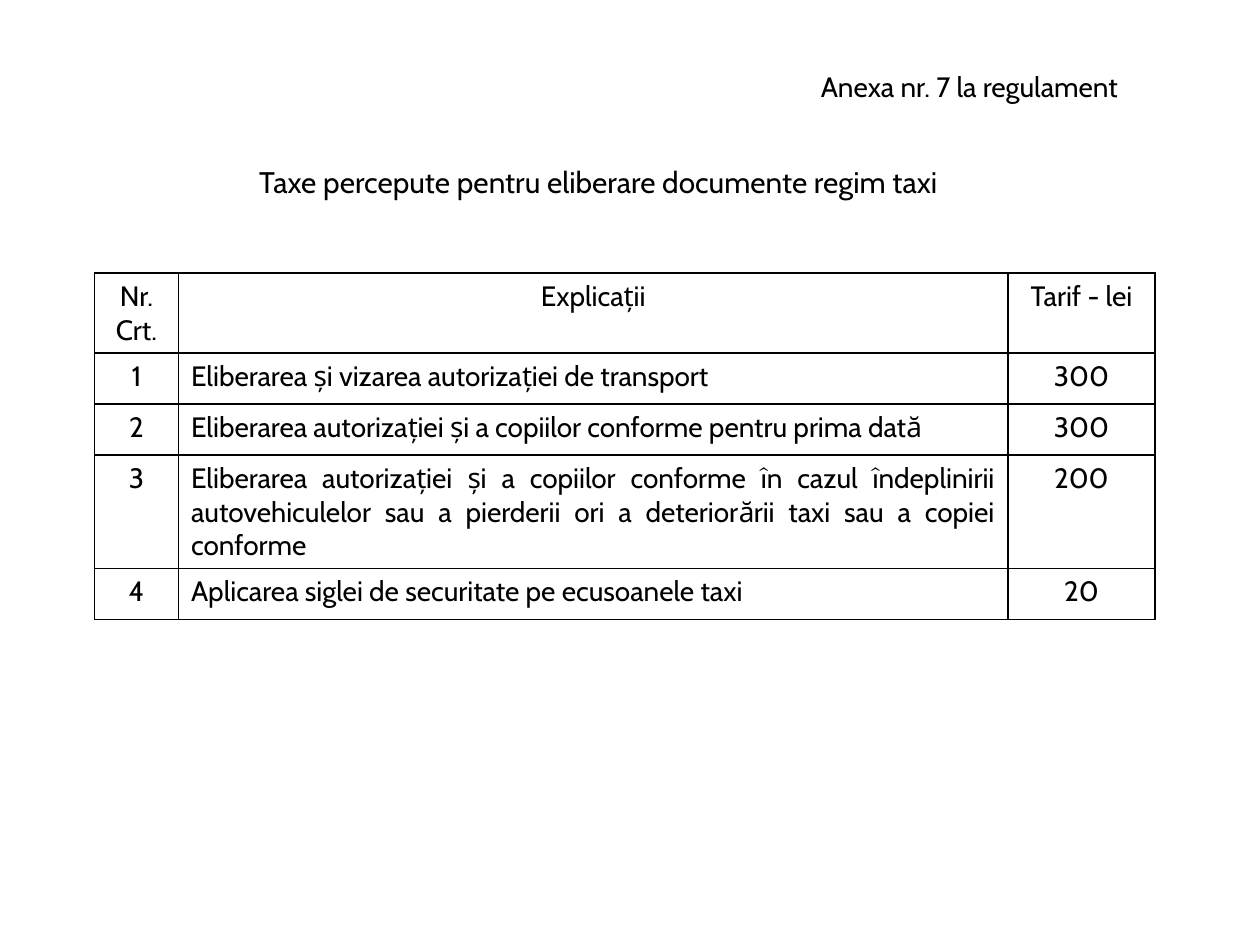
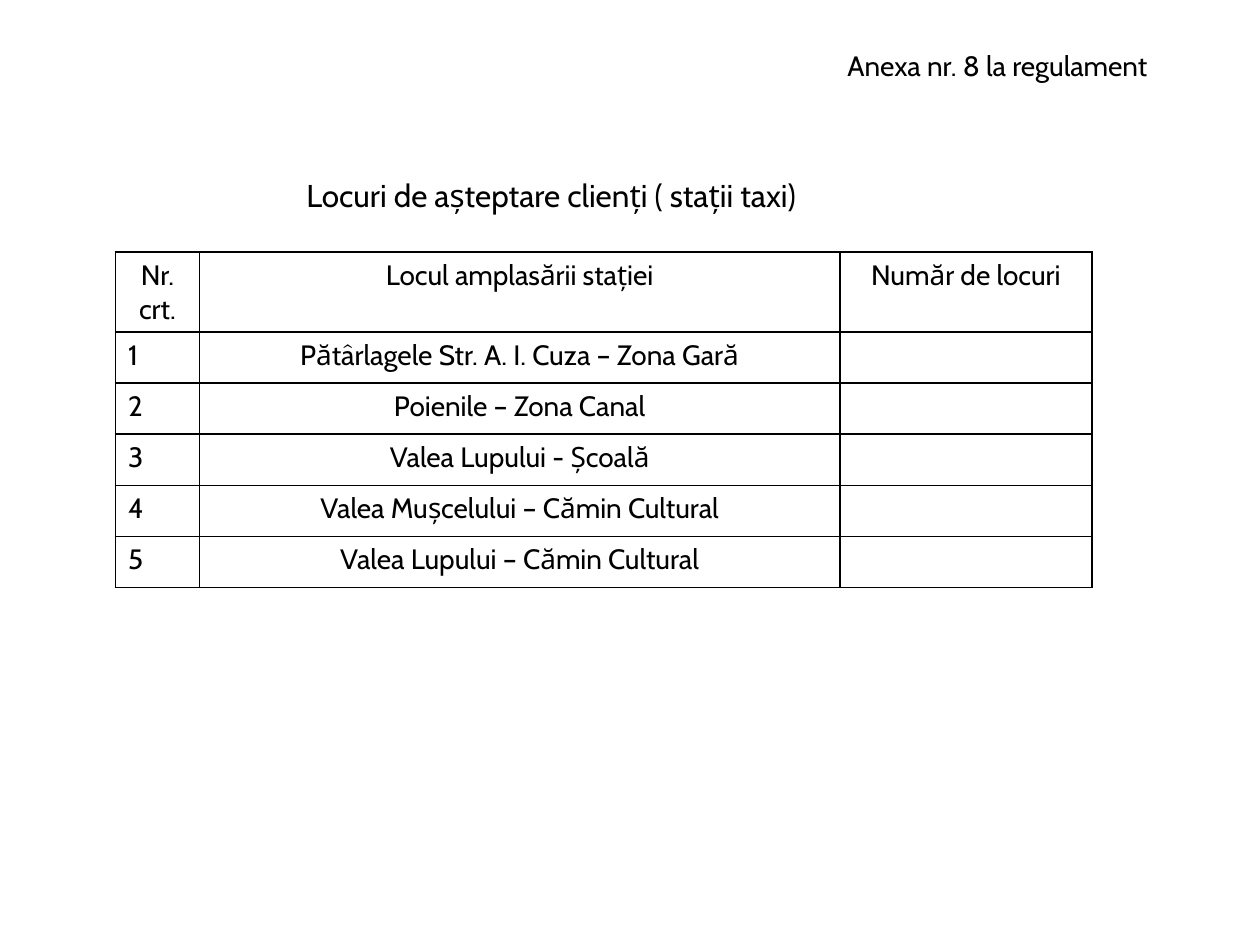
from dataclasses import dataclass

from lxml.etree import SubElement
from pptx import Presentation
from pptx.dml.color import RGBColor
from pptx.enum.text import MSO_AUTO_SIZE as AutoSize, PP_ALIGN as Align
from pptx.oxml.ns import qn
from pptx.util import Pt


@dataclass(frozen=True)
class Theme:
    font: str = "Cabin"
    ink: str = "000000"
    body: int = 16
    fees_title: int = 17
    stations_title: int = 18
    border: int = 1
    header_row: float = 45.7
    row: float = 29.2


class Deck:
    """Holds the theme and the slide being built."""

    def __init__(self, theme):
        self.theme = theme
        self.prs = Presentation()
        self.prs.slide_width, self.prs.slide_height = Pt(720), Pt(540)
        self.s = None

    def slide(self):
        self.s = self.prs.slides.add_slide(self.prs.slide_layouts[6])

    def set_text(self, tf, text, size, align):
        tf.text = text
        p = tf.paragraphs[0]
        p.alignment = align
        for r in p.runs:
            r.font.name = self.theme.font
            r.font.size = Pt(size)
            r.font.color.rgb = RGBColor.from_string(self.theme.ink)

    def text(self, x, y, w, h, text, size, align=Align.LEFT):
        sp = self.s.shapes.add_textbox(Pt(x), Pt(y), Pt(w), Pt(h))
        tf = sp.text_frame
        tf.word_wrap = True
        tf.auto_size = AutoSize.SHAPE_TO_FIT_TEXT
        self.set_text(tf, text, size, align)

    def borders(self, cell):
        tcPr = cell._tc.get_or_add_tcPr()
        for i, side in enumerate(("lnL", "lnR", "lnT", "lnB")):
            ln = SubElement(tcPr, qn(f"a:{side}"), w=str(Pt(self.theme.border)))
            fill = SubElement(ln, qn("a:solidFill"))
            SubElement(fill, qn("a:srgbClr"), val=self.theme.ink)
            tcPr.insert(i, ln)

    def table(self, x, y, widths, header, rows, aligns, heights=None):
        """The header is always centred; aligns gives the body columns."""
        heights = [self.theme.header_row] + (heights or [self.theme.row] * len(rows))
        frame = self.s.shapes.add_table(len(heights), len(widths), Pt(x), Pt(y),
                                        Pt(sum(widths)), Pt(sum(heights)))
        table = frame.table
        table.first_row = table.horz_banding = False
        for column, width in zip(table.columns, widths):
            column.width = Pt(width)
        for row, height in zip(table.rows, heights):
            row.height = Pt(height)
        for i, values in enumerate([header] + rows):
            for j, value in enumerate(values):
                cell = table.cell(i, j)
                cell.fill.background()
                self.borders(cell)
                align = aligns[j] if i else Align.CENTER
                self.set_text(cell.text_frame, value, self.theme.body, align)
        return table


def fees(deck):
    deck.slide()
    # Headings
    deck.text(462, 36, 216, 26.6, "Anexa nr. 7 la regulament", deck.theme.body)
    deck.text(120, 90, 444, 28, "Taxe percepute pentru eliberare documente regim taxi",
              deck.theme.fees_title, Align.CENTER)
    # Fee table
    row = deck.theme.row
    table = deck.table(
        54, 156, [48, 474, 84], ["Nr. Crt.", "Explicații", "Tarif - lei"],
        [["1", "Eliberarea și vizarea autorizației de transport", "300"],
         ["2", "Eliberarea autorizației și a copiilor conforme pentru prima dată", "300"],
         ["3", "Eliberarea autorizației și a copiilor conforme în cazul îndeplinirii "
               "autovehiculelor sau a pierderii ori a deteriorării taxi sau a copiei "
               "conforme", "200"],
         ["4", "Aplicarea siglei de securitate pe ecusoanele taxi", "20"]],
        [Align.CENTER, Align.LEFT, Align.CENTER], [row, row, 64.7, row])
    table.cell(3, 1).text_frame.paragraphs[0].alignment = Align.JUSTIFY


def stations(deck):
    deck.slide()
    # Headings
    deck.text(444, 24, 252, 26.6, "Anexa nr. 8 la regulament", deck.theme.body, Align.CENTER)
    deck.text(168, 97.2, 342, 29, "Locuri de așteptare clienți ( stații taxi)",
              deck.theme.stations_title)
    # Station table
    places = ["Pătârlagele Str. A. I. Cuza – Zona Gară", "Poienile – Zona Canal",
              "Valea Lupului - Școală", "Valea Mușcelului – Cămin Cultural",
              "Valea Lupului – Cămin Cultural"]
    deck.table(66, 144, [48, 366, 144],
               ["Nr. crt.", "Locul amplasării stației", "Număr de locuri"],
               [[str(n), place, ""] for n, place in enumerate(places, 1)],
               [Align.LEFT, Align.CENTER, Align.CENTER])


def main():
    deck = Deck(Theme())
    fees(deck)
    stations(deck)
    deck.prs.save("out.pptx")


if __name__ == "__main__":
    main()
